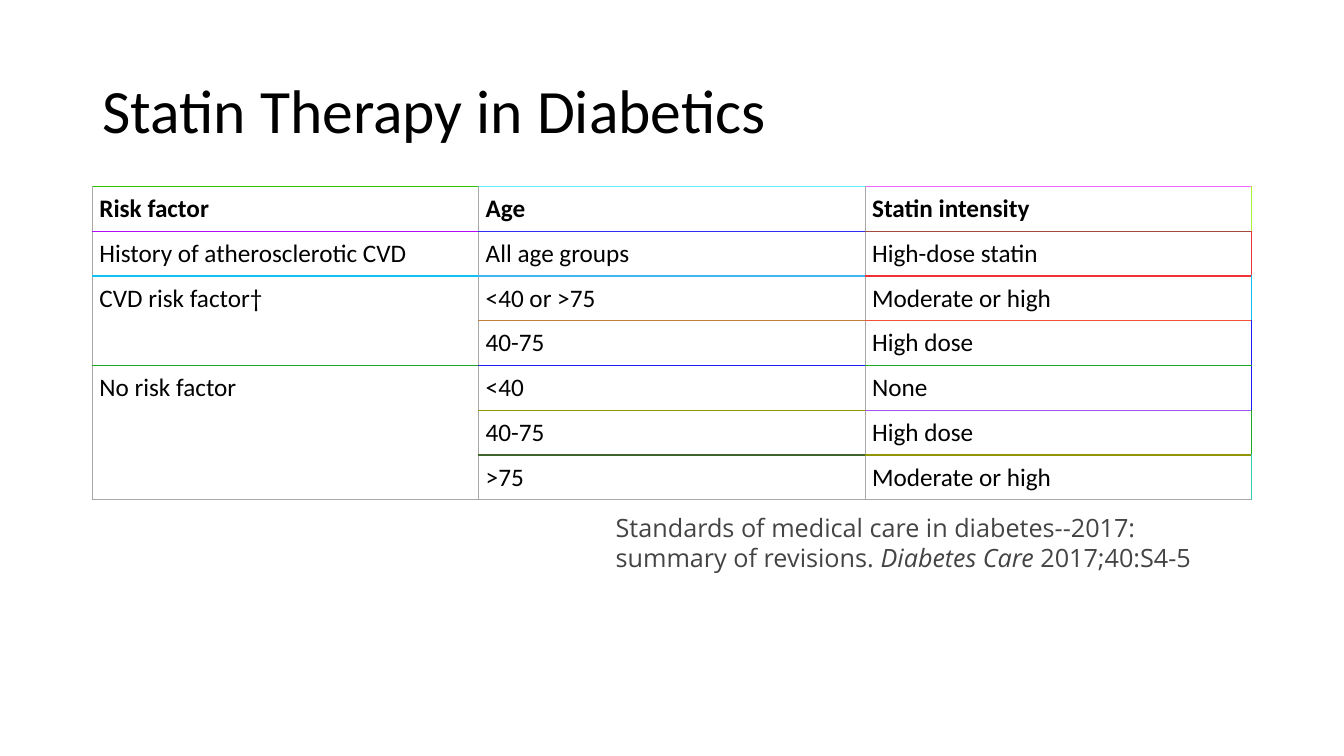
import pptx
import pptx.dml.color
import pptx.enum.text
import pptx.oxml
import pptx.oxml.ns
import pptx.util

Pt = pptx.util.Pt
GREY = "A8A8A8"
BLACK = "000000"
WHITE = "FFFFFF"

STATIN_ROWS = [
    ["Risk factor", "Age", "Statin intensity"],
    ["History of atherosclerotic CVD", "All age groups", "High-dose statin"],
    ["CVD risk factor†", "<40 or >75", "Moderate or high"],
    ["", "40-75", "High dose"],
    ["No risk factor", "<40", "None"],
    ["", "40-75", "High dose"],
    ["", ">75", "Moderate or high"],
]
# First row and height of each merged risk group
RISK_SPANS = {2: 2, 4: 3}

# Rules above each row, the last one below the table; one colour per column
ROW_RULES = [
    ["30C30A", "60EEF8", "F066FF"],
    ["B00DF5", "302EF0", "A04B3C"],
    ["10C3F2", "40B7F4", "F03334"],
    [GREY, "C0803C", "F05139"],
    ["20A927", "201CF6", "20A927"],
    [GREY, "909606", "A057F2"],
    [GREY, "40642D", "909606"],
    [GREY, GREY, GREY],
]
RIGHT_EDGE = ["B0F332", "F03334", "10C2F4", "201CF6", "201CF6", "20A927", "30CCB6"]


def color(hex_value):
    return pptx.dml.color.RGBColor.from_string(hex_value)


def apply_format(target, values):
    for name, value in values.items():
        setattr(target, name, value)


def format_font(font, hex_value, **values):
    apply_format(font, values)
    font.color.rgb = color(hex_value)


def add_borders(cell, borders):
    properties = cell._tc.get_or_add_tcPr()
    for side, hex_value in borders.items():
        properties.append(pptx.oxml.parse_xml(
            f'<a:ln{side} {pptx.oxml.ns.nsdecls("a")} w="{Pt(1)}">'
            f'<a:solidFill><a:srgbClr val="{hex_value}"/></a:solidFill>'
            f'<a:prstDash val="solid"/></a:ln{side}>'))


def fill_title(slide):
    title = slide.shapes.title
    apply_format(title, {"left": Pt(66), "top": Pt(28.8),
                         "width": Pt(828), "height": Pt(104.4)})
    title.text_frame.text = "Statin Therapy in Diabetics"
    title.text_frame.vertical_anchor = pptx.enum.text.MSO_ANCHOR.MIDDLE
    heading = title.text_frame.paragraphs[0]
    apply_format(heading, {"alignment": pptx.enum.text.PP_ALIGN.LEFT,
                           "line_spacing": 0.9})
    format_font(heading.font, BLACK, name="Calibri", size=Pt(44))


def format_cell(cell, text, is_header, borders):
    apply_format(cell, {side: Pt(5) for side in (
        "margin_left", "margin_right", "margin_top", "margin_bottom")})
    add_borders(cell, borders)
    cell.fill.solid()
    cell.fill.fore_color.rgb = color(WHITE)
    cell.text = text
    format_font(cell.text_frame.paragraphs[0].font, BLACK,
                name="Calibri", size=Pt(18), bold=is_header)


def add_statin_table(slide):
    row_count, column_count = len(STATIN_ROWS), len(STATIN_ROWS[0])
    table = slide.shapes.add_table(row_count, column_count, Pt(66), Pt(133.2),
                                   Pt(828), Pt(32 * row_count)).table
    apply_format(table, {"first_row": False, "horz_banding": False})

    # Cells and their borders
    for row, texts in enumerate(STATIN_ROWS):
        for column, text in enumerate(texts):
            top, bottom = row, row + 1
            if column == 0:
                for start, height in RISK_SPANS.items():
                    if start <= row < start + height:
                        top, bottom = start, start + height
            is_last = column == column_count - 1
            format_cell(table.cell(row, column), text, row == 0, {
                "L": GREY,
                "R": RIGHT_EDGE[row] if is_last else GREY,
                "T": ROW_RULES[top][column],
                "B": ROW_RULES[bottom][column],
            })

    # Risk groups that cover several ages
    for start, height in RISK_SPANS.items():
        table.cell(start, 0).merge(table.cell(start + height - 1, 0))


def add_citation(slide):
    citation = slide.shapes.add_textbox(Pt(432.7), Pt(362.2), Pt(441.4), Pt(51))
    citation.text_frame.word_wrap = True
    reference = citation.text_frame.paragraphs[0]
    for text, is_italic in [
        ("Standards of medical care in diabetes--2017: summary of revisions. ", False),
        ("Diabetes Care ", True),
        ("2017;40:S4-5", False),
    ]:
        part = reference.add_run()
        part.text = text
        format_font(part.font, "444444", name="Open Sans", size=Pt(18),
                    italic=is_italic)


def main():
    deck = pptx.Presentation()
    apply_format(deck, {"slide_width": Pt(960), "slide_height": Pt(540)})
    slide = deck.slides.add_slide(deck.slide_layouts[5])
    fill_title(slide)
    add_statin_table(slide)
    add_citation(slide)
    deck.save("out.pptx")


if __name__ == "__main__":
    main()
